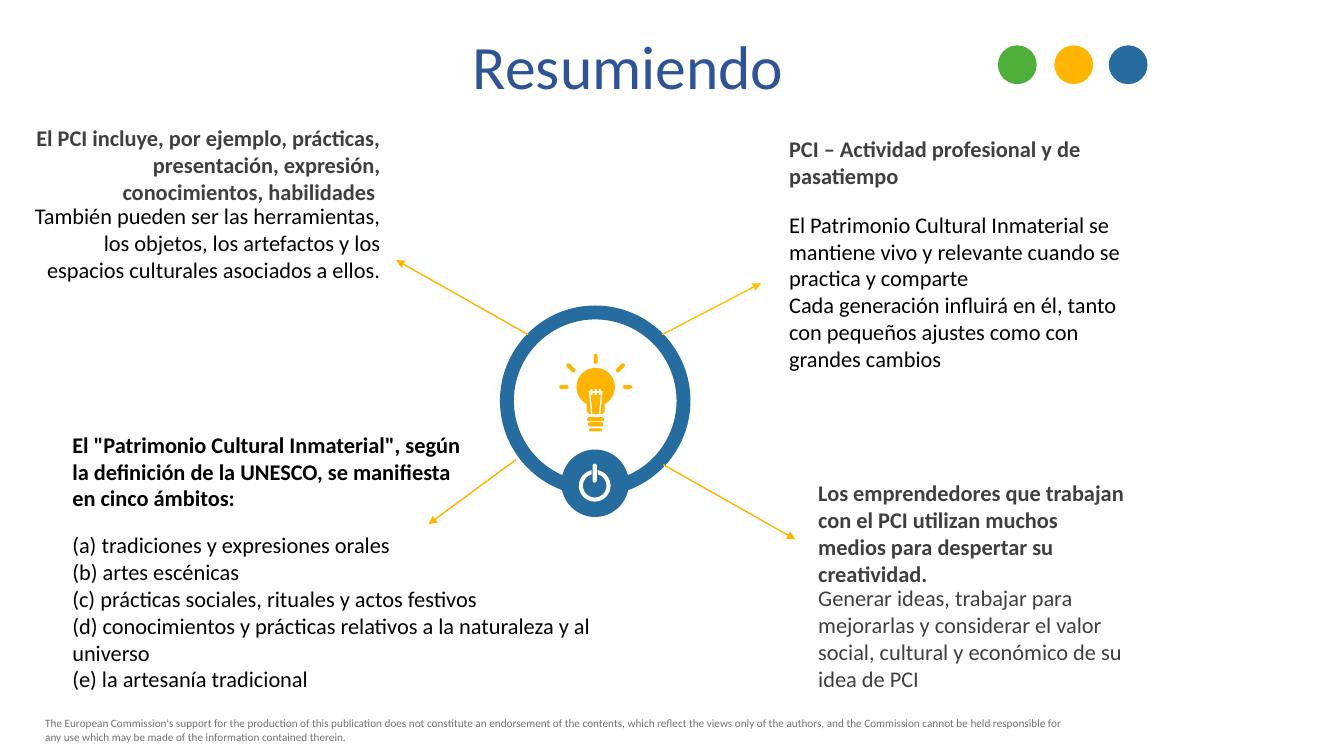
from dataclasses import dataclass
from math import cos, radians, sin

from pptx import Presentation
from pptx.dml.color import RGBColor
from pptx.enum.shapes import MSO_CONNECTOR, MSO_SHAPE
from pptx.enum.text import MSO_ANCHOR, MSO_AUTO_SIZE, PP_ALIGN
from pptx.oxml.ns import qn
from pptx.util import Pt
from lxml import etree

LEFT, CENTER, RIGHT = PP_ALIGN.LEFT, PP_ALIGN.CENTER, PP_ALIGN.RIGHT
TOP, MIDDLE = MSO_ANCHOR.TOP, MSO_ANCHOR.MIDDLE
GROW, FIXED = MSO_AUTO_SIZE.SHAPE_TO_FIT_TEXT, MSO_AUTO_SIZE.NONE
OVAL, DONUT = MSO_SHAPE.OVAL, MSO_SHAPE.DONUT
STRAIGHT = MSO_CONNECTOR.STRAIGHT


@dataclass(frozen=True)
class Theme:
    font: str = "Calibri"
    title: str = "2F5496"
    ink: str = "000000"
    gray: str = "3F3F3F"
    footer: str = "757070"
    blue: str = "266C9F"
    amber: str = "FFB500"
    gold: str = "FFC000"
    green: str = "4EAE3A"
    white: str = "FFFFFF"
    title_size: int = 44
    body_size: int = 16
    footer_size: int = 8


THEME = Theme()
UNITS_PER_POINT = 100
BULB_X, BULB_Y = 425.5, 276.5
POWER_X, POWER_Y = 424.8, 347


def apply(target, values):
    for name, value in values.items():
        setattr(target, name, value)


def add_text(page, frame, lines, size=THEME.body_size, color=THEME.ink, bold=False,
             align=LEFT, anchor=MIDDLE, fit=GROW, spacing=None):
    box = page.shapes.add_textbox(*map(Pt, frame))
    text = box.text_frame
    apply(text, {"word_wrap": True, "auto_size": fit, "vertical_anchor": anchor})
    for index, line in enumerate(lines):
        para = text.add_paragraph() if index else text.paragraphs[0]
        apply(para, {"alignment": align, "line_spacing": spacing})
        span = para.add_run()
        span.text = line
        apply(span.font, {"name": THEME.font, "size": Pt(size), "bold": bold})
        span.font.color.rgb = RGBColor.from_string(color)


def paint(shape, color):
    shape.shadow.inherit = False
    shape.fill.solid()
    shape.fill.fore_color.rgb = RGBColor.from_string(color)
    shape.line.fill.background()


def add_round(page, kind, frame, color):
    shape = page.shapes.add_shape(kind, *map(Pt, frame))
    paint(shape, color)
    return shape


def add_arrow(page, start, end, color):
    arrow = page.shapes.add_connector(STRAIGHT, *map(Pt, start + end))
    arrow.line.width = Pt(1)
    arrow.line.color.rgb = RGBColor.from_string(color)
    line = arrow.line._get_or_add_ln()
    etree.SubElement(line, qn("a:tailEnd"), type="triangle")
    etree.SubElement(arrow._element.spPr, qn("a:effectLst"))


# Outlines for the icons: lists of points, angles clockwise from the right
def arc(x, y, radius, first, last, steps=40):
    angles = [radians(first + (last - first) * i / steps) for i in range(steps + 1)]
    return [(x + radius * cos(a), y + radius * sin(a)) for a in angles]


def capsule(x, y, length, width, angle=0):
    reach = (length - width) / 2
    dx, dy = reach * cos(radians(angle)), reach * sin(radians(angle))
    return (arc(x + dx, y + dy, width / 2, angle - 90, angle + 90, 10)
            + arc(x - dx, y - dy, width / 2, angle + 90, angle + 270, 10))


def filament():
    teeth = (-2.9, 0, 2.9)
    upper = [(c + dx, y) for c in teeth
             for dx, y in ((-0.8, 2.9), (-0.8, 1.4), (0.8, 1.4), (0.8, 2.9))]
    lower = [(c + dx, y) for c in reversed(teeth)
             for dx, y in ((0.8, 4.3), (0.8, 5.7), (-0.8, 5.7), (-0.8, 4.3))]
    points = ([(-5, 2.9)] + upper + [(5, 2.9), (3.4, 19), (2.3, 19)]
              + lower + [(-2.3, 19), (-3.4, 19)])
    return [(BULB_X + x, BULB_Y + y) for x, y in points]


def add_outline(page, contours, color):
    scaled = [[(x * UNITS_PER_POINT, y * UNITS_PER_POINT) for x, y in contour]
              for contour in contours]
    builder = page.shapes.build_freeform(*scaled[0][0], scale=Pt(1) / UNITS_PER_POINT)
    for index, contour in enumerate(scaled):
        if index:
            builder.move_to(*contour[0])
        builder.add_line_segments(contour[1:], close=True)
    paint(builder.convert_to_shape(), color)


def add_bulb(page):
    neck = [(6.5, 17.5), (4.5, 19.4), (-4.5, 19.4), (-6.5, 17.5)]
    glass = (arc(BULB_X, BULB_Y, 13.7, 118, 422)
             + [(BULB_X + x, BULB_Y + y) for x, y in neck])
    rays = [(-22.7, 0, 6.5, 0), (-17.7, -13.7, 8, 45), (0, -20.2, 7.2, 90),
            (17.7, -13.7, 8, -45), (22.7, 0, 6.5, 0)]
    bars = [(23, 12.2, 2.9), (26.6, 10.8, 2.9), (30.6, 9.4, 2.2)]
    contours = [glass, filament()]
    contours += [capsule(BULB_X + x, BULB_Y + y, length, 2.9, angle)
                 for x, y, length, angle in rays]
    contours += [capsule(BULB_X, BULB_Y + y, length, width) for y, length, width in bars]
    add_outline(page, contours, THEME.amber)


def add_power_sign(page):
    ring = (arc(POWER_X, POWER_Y, 11.3, -79, 259)
            + arc(POWER_X, POWER_Y, 8.4, 255, -75))
    bar = capsule(POWER_X, POWER_Y - 9, 13.6, 3, 90)
    add_outline(page, [ring, bar], THEME.white)


def main():
    deck = Presentation()
    apply(deck, {"slide_width": Pt(960), "slide_height": Pt(540)})
    page = deck.slides.add_slide(deck.slide_layouts[6])

    # Footer and title
    add_text(page, (25.2, 508.3, 753.1, 26.6), [
        "The European Commission's support for the production of this publication does not "
        "constitute an endorsement of the contents, which reflect the views only of the "
        "authors, and the Commission cannot be held responsible for any use which may be "
        "made of the information contained therein."],
        THEME.footer_size, THEME.footer, anchor=TOP)
    add_text(page, (206.6, 22.3, 484.6, 56.9), ["Resumiendo"], THEME.title_size,
             THEME.title, align=CENTER, anchor=TOP, fit=FIXED, spacing=0.9)

    # Central emblem
    ring = add_round(page, DONUT, (357.1, 218.2, 136.1, 136.1), THEME.blue)
    ring.adjustments[0] = 0.073
    add_round(page, OVAL, (401, 321.1, 48.2, 48.2), THEME.blue)
    add_bulb(page)
    add_power_sign(page)

    # Arrows to the four texts
    for start, end, color in (
            ((377.3, 239), (283, 185.8), THEME.amber),
            ((473, 239), (543.6, 202.3), THEME.gold),
            ((473.8, 331.9), (568.1, 385.2), THEME.amber),
            ((368.6, 328.3), (306, 374.4), THEME.amber)):
        add_arrow(page, start, end, color)

    # Upper left: what it includes
    add_text(page, (13, 140.4, 265.7, 65.5), [
        "También pueden ser las herramientas, los objetos, los artefactos y los espacios "
        "culturales asociados a ellos."], align=RIGHT)
    add_text(page, (13, 85, 265.7, 65.5), [
        "El PCI incluye, por ejemplo, prácticas, presentación, expresión, conocimientos, "
        "habilidades "], color=THEME.gray, bold=True, align=RIGHT)

    # Lower left: the five domains
    add_text(page, (44.6, 375.1, 429.1, 123.8), [
        "(a) tradiciones y expresiones orales",
        "(b) artes escénicas",
        "(c) prácticas sociales, rituales y actos festivos",
        "(d) conocimientos y prácticas relativos a la naturaleza y al universo",
        "(e) la artesanía tradicional"])
    add_text(page, (44.6, 303.8, 295.2, 65.5), [
        'El "Patrimonio Cultural Inmaterial", según la definición de la UNESCO, se '
        "manifiesta en cinco ámbitos:"], bold=True)

    # Upper right: profession and hobby
    add_text(page, (556.6, 146.2, 274.3, 123.8), [
        "El Patrimonio Cultural Inmaterial se mantiene vivo y relevante cuando se "
        "practica y comparte",
        "Cada generación influirá en él, tanto con pequeños ajustes como con grandes "
        "cambios"])
    add_text(page, (556.6, 92.9, 254.2, 46.1), [
        "PCI – Actividad profesional y de pasatiempo"], color=THEME.gray, bold=True)

    # Lower right: entrepreneurs
    add_text(page, (577.4, 414, 232.6, 85), [
        "Generar ideas, trabajar para mejorarlas y considerar el valor social, cultural y "
        "económico de su idea de PCI"], color=THEME.gray, anchor=TOP)
    add_text(page, (577.4, 338.4, 232.6, 85), [
        "Los emprendedores que trabajan con el PCI utilizan muchos medios para despertar "
        "su creatividad."], color=THEME.gray, bold=True)

    # Corner dots
    for left, color in ((712.8, THEME.green), (753.1, THEME.amber), (792, THEME.blue)):
        add_round(page, OVAL, (left, 32.4, 27.7, 27.7), color)

    deck.save("out.pptx")


if __name__ == "__main__":
    main()
